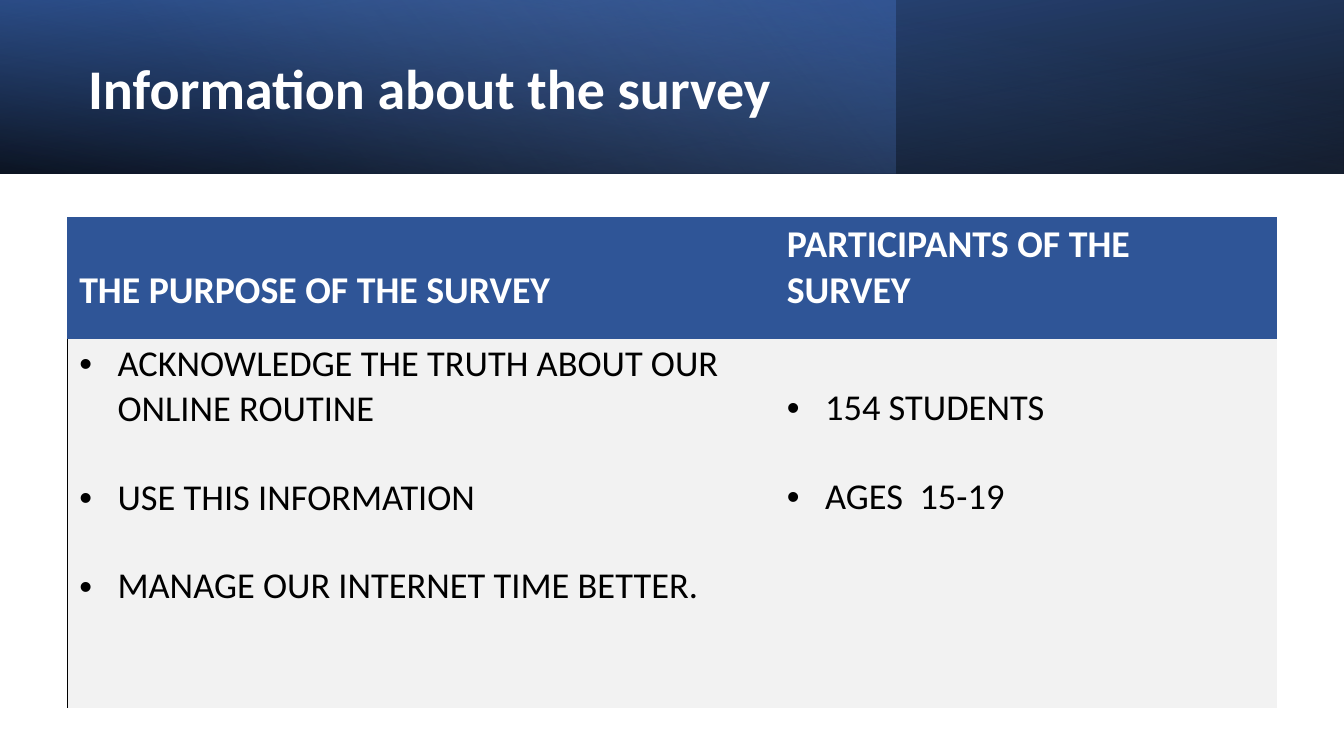
import dataclasses

import pptx
import pptx.dml.color
import pptx.enum.shapes
import pptx.enum.text
import pptx.oxml
import pptx.oxml.ns
import pptx.util


@dataclasses.dataclass(frozen=True)
class Theme:
    font: str = "Calibri"
    black: str = "000000"
    white: str = "FFFFFF"
    navy: str = "2F5597"
    blue: str = "4472C4"
    light_blue: str = "8FAADC"
    panel: str = "F2F2F2"
    title_size: float = 40
    header_size: float = 27
    body_size: float = 26


THEME = Theme()
WIDTH, HEIGHT = pptx.util.Inches(13.33), pptx.util.Inches(7.5)
BANNER_HEIGHT = 0.23 * HEIGHT
NO_STYLE = "{2D5ABB26-0587-4C30-8999-92F81FD0307C}"
NAMESPACE = pptx.oxml.ns.nsdecls("a")

COLUMNS = [
    ("THE PURPOSE OF THE SURVEY",
     ["ACKNOWLEDGE THE TRUTH ABOUT OUR ONLINE ROUTINE",
      "USE THIS INFORMATION",
      "MANAGE OUR INTERNET TIME BETTER."], 0.03),
    ("PARTICIPANTS OF THE SURVEY",
     ["154 STUDENTS", "AGES  15-19"], 0.47),
]


def format_text(paragraph, size, color, bold=False):
    for run in paragraph.runs:
        run.font.name = THEME.font
        run.font.size = pptx.util.Pt(size)
        run.font.bold = bold
        run.font.color.rgb = pptx.dml.color.RGBColor.from_string(color)


def add_gradient(slide, box, stops, angle, flip=False, rotation=0):
    shape = slide.shapes.add_shape(
        pptx.enum.shapes.MSO_SHAPE.RECTANGLE, *map(int, box))
    shape.shadow.inherit = False
    shape.line.fill.background()
    shape.rotation = rotation
    properties = shape._element.spPr
    if flip:
        properties.find(pptx.oxml.ns.qn("a:xfrm")).set("flipH", "1")
    stop_xml = "".join(
        f'<a:gs pos="{position * 1000}"><a:srgbClr val="{color}">'
        f'<a:alpha val="{opacity * 1000}"/></a:srgbClr></a:gs>'
        for position, color, opacity in stops)
    gradient = pptx.oxml.parse_xml(
        f'<a:gradFill {NAMESPACE} rotWithShape="1"><a:gsLst>{stop_xml}</a:gsLst>'
        f'<a:lin ang="{angle * 60000}" scaled="0"/></a:gradFill>')
    shape.fill.background()
    properties.replace(properties.find(pptx.oxml.ns.qn("a:noFill")), gradient)


def add_banner(slide, left, top, width, height):
    box = (left, top, width, height)
    add_gradient(slide, box, [(0, THEME.black, 96), (100, THEME.navy, 100)],
                 100, flip=True, rotation=180)
    add_gradient(slide, (left, top, width * 2 / 3, height),
                 [(0, THEME.blue, 41), (74, THEME.light_blue, 0)], 140)
    add_gradient(slide, box, [(0, THEME.black, 63), (78, THEME.blue, 15)],
                 260, flip=True)

    title = slide.shapes.title
    slide.shapes._spTree.append(title._element)
    title.left, title.top = int(left + 0.058 * width), int(top + 0.157 * height)
    title.width, title.height = int(0.579 * width), int(0.738 * height)
    title.text_frame.text = "Information about the survey"
    title.text_frame.vertical_anchor = pptx.enum.text.MSO_ANCHOR.MIDDLE
    paragraph = title.text_frame.paragraphs[0]
    paragraph.alignment = pptx.enum.text.PP_ALIGN.LEFT
    paragraph.line_spacing = 0.9
    format_text(paragraph, THEME.title_size, THEME.white, bold=True)


def style_cell(cell, color, margin_top=0.03):
    cell.fill.solid()
    cell.fill.fore_color.rgb = pptx.dml.color.RGBColor.from_string(color)
    cell.margin_left = pptx.util.Inches(0.12)
    cell.margin_right = pptx.util.Inches(0.16)
    cell.margin_top = pptx.util.Inches(margin_top)
    cell.margin_bottom = pptx.util.Inches(0.25)


def add_bullet(paragraph):
    properties = paragraph._p.get_or_add_pPr()
    indent = pptx.util.Inches(0.38)
    properties.set("marL", str(indent))
    properties.set("indent", str(-indent))
    for xml in (f'<a:buFont {NAMESPACE} typeface="Arial"/>',
                f'<a:buChar {NAMESPACE} char="•"/>'):
        properties.append(pptx.oxml.parse_xml(xml))


def fill_bullets(cell, items):
    cell.text_frame.text = "\n".join(items)
    for index, paragraph in enumerate(cell.text_frame.paragraphs):
        if index:
            paragraph.space_before = pptx.util.Pt(1.22 * THEME.body_size)
        add_bullet(paragraph)
        format_text(paragraph, THEME.body_size, THEME.black)


def add_left_border(cell):
    cell._tc.get_or_add_tcPr().insert(0, pptx.oxml.parse_xml(
        f'<a:lnL {NAMESPACE} w="12700"><a:solidFill>'
        f'<a:srgbClr val="{THEME.black}"/></a:solidFill></a:lnL>'))


def add_survey_table(slide, left, top, width, height):
    frame = slide.shapes.add_table(
        2, len(COLUMNS), *map(int, (left, top, width, height)))
    table = frame.table
    table.horz_banding = False
    table.first_row = False
    table._tbl.tblPr.find(pptx.oxml.ns.qn("a:tableStyleId")).text = NO_STYLE
    for column, share in zip(table.columns, (0.585, 0.415)):
        column.width = int(share * width)
    for row, share in zip(table.rows, (0.248, 0.752)):
        row.height = int(share * height)

    for index, (heading, items, margin_top) in enumerate(COLUMNS):
        header, body = table.cell(0, index), table.cell(1, index)
        style_cell(header, THEME.navy)
        header.vertical_anchor = pptx.enum.text.MSO_ANCHOR.BOTTOM
        header.text_frame.text = heading
        format_text(header.text_frame.paragraphs[0],
                    THEME.header_size, THEME.white, bold=True)
        style_cell(body, THEME.panel, margin_top)
        fill_bullets(body, items)
    add_left_border(table.cell(1, 0))


def main():
    presentation = pptx.Presentation()
    presentation.slide_width, presentation.slide_height = WIDTH, HEIGHT
    slide = presentation.slides.add_slide(presentation.slide_layouts[5])
    add_banner(slide, 0, 0, WIDTH, BANNER_HEIGHT)
    add_survey_table(slide, 0.05 * WIDTH, 0.287 * HEIGHT,
                     0.9 * WIDTH, 0.65 * HEIGHT)
    presentation.save("out.pptx")


if __name__ == "__main__":
    main()
